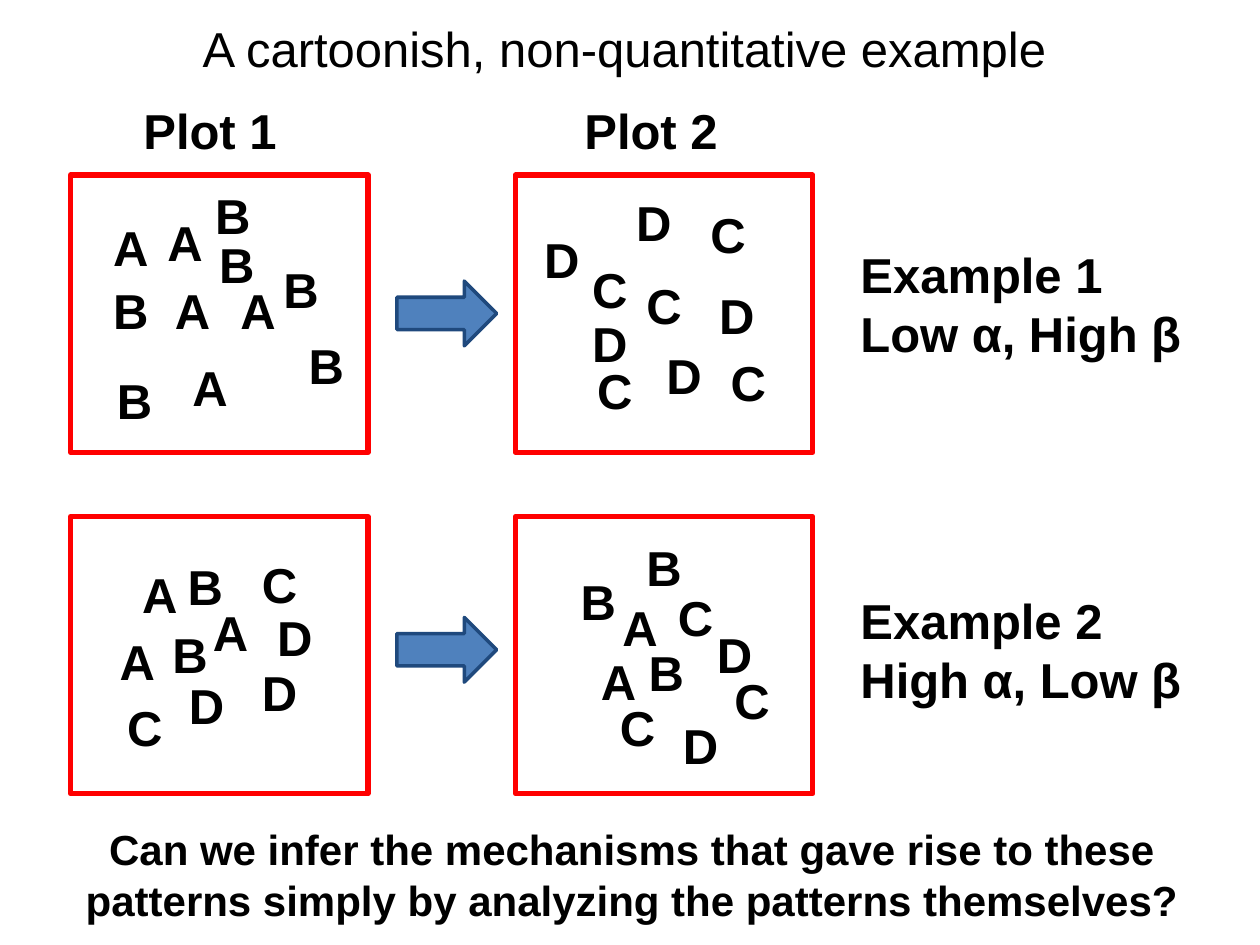
from dataclasses import dataclass

from pptx import Presentation
from pptx.dml.color import RGBColor
from pptx.enum.shapes import MSO_SHAPE as Preset
from pptx.enum.text import MSO_AUTO_SIZE as AutoSize, PP_ALIGN as Align
from pptx.util import Pt


@dataclass(frozen=True)
class Theme:
    font: str = "Arial"
    text: RGBColor = RGBColor(0, 0, 0)
    frame: RGBColor = RGBColor(0xFF, 0, 0)
    arrow: RGBColor = RGBColor(0x4F, 0x81, 0xBD)
    arrow_edge: RGBColor = RGBColor(0x1F, 0x49, 0x7D)
    size: int = 28
    question_size: int = 24


@dataclass(frozen=True)
class Box:
    left: float
    top: float
    width: float
    height: float

    def lengths(self) -> tuple:
        return Pt(self.left), Pt(self.top), Pt(self.width), Pt(self.height)


@dataclass(frozen=True)
class Plot:
    """Species letters, each with its places measured from the frame corner."""
    species: dict[str, list[tuple[float, float]]]


@dataclass(frozen=True)
class Example:
    lines: tuple[str, str]
    frame_top: float
    arrow_top: float
    label_top: float
    plots: tuple[Plot, Plot]


THEME = Theme()
PLOT_LEFTS = (40.3, 294.5)
PLOT_WIDTH, PLOT_HEIGHT = 170, 158.4
LETTER_WIDTH, LINE_HEIGHT = 35.3, 41

EXAMPLES = (
    Example(("Example 1", "Low α, High β"), 100.1, 160.6, 136.1, (
        Plot({"A": [(17.3, 20.9), (48.2, 18), (52.6, 56.9), (62.6, 100.8), (90, 56.9)],
              "B": [(19.4, 108), (75.6, 2.2), (17.3, 56.9), (128.9, 87.8),
                    (77.8, 30.2), (114.5, 44.6)]}),
        Plot({"C": [(67.7, 54), (104.4, 13), (39.6, 102.2), (115.9, 97.9), (36.7, 44.6)],
              "D": [(9.4, 27.4), (61.9, 6.5), (79.2, 93.6), (36.7, 75.6), (109.4, 59.8)]}),
    )),
    Example(("Example 2", "High α, Low β"), 295.2, 352.8, 334.1, (
        Plot({"A": [(33.8, 23.8), (20.9, 61.9), (74.2, 45.4)],
              "B": [(59.8, 19.4), (51.1, 58.3)],
              "C": [(102.2, 18), (25.2, 100.1)],
              "D": [(110.9, 48.2), (60.5, 87.1), (102.2, 79.9)]}),
        Plot({"A": [(54, 42.5), (41.8, 73.4)],
              "B": [(30.2, 28.1), (67.7, 8.6), (69.1, 68.4)],
              "C": [(52.6, 100.1), (85.7, 36.7), (118.1, 84.2)],
              "D": [(108, 58.3), (88.6, 110.2)]}),
    )),
)


def add_text(shapes, box: Box, *lines: str, size: int = THEME.size, bold: bool = True,
             wrap: bool = False, align: Align = Align.LEFT) -> None:
    frame = shapes.add_textbox(*box.lengths()).text_frame
    frame.word_wrap = wrap
    frame.auto_size = AutoSize.SHAPE_TO_FIT_TEXT
    frame.text = "\n".join(lines)
    for para in frame.paragraphs:
        para.alignment = align
        para.font.name = THEME.font
        para.font.size = Pt(size)
        para.font.bold = bold
        para.font.color.rgb = THEME.text


def add_preset(shapes, preset: Preset, box: Box, line: RGBColor, weight: float,
               fill: RGBColor | None = None) -> None:
    shape = shapes.add_shape(preset, *box.lengths())
    shape.shadow.inherit = False
    if fill is None:
        shape.fill.background()
    else:
        shape.fill.solid()
        shape.fill.fore_color.rgb = fill
    shape.line.color.rgb = line
    shape.line.width = Pt(weight)


def add_plot(page, plot: Plot, left: float, top: float) -> None:
    group = page.shapes.add_group_shape().shapes
    for letter, places in plot.species.items():
        for across, down in places:
            add_text(group, Box(left + across, top + down, LETTER_WIDTH, LINE_HEIGHT), letter)
    add_preset(group, Preset.RECTANGLE, Box(left, top, PLOT_WIDTH, PLOT_HEIGHT),
               THEME.frame, 3)


def add_example(page, example: Example) -> None:
    for plot, left in zip(example.plots, PLOT_LEFTS):
        add_plot(page, plot, left, example.frame_top)
    add_preset(page.shapes, Preset.RIGHT_ARROW, Box(226.8, example.arrow_top, 57, 37),
               THEME.arrow_edge, 2, THEME.arrow)
    add_text(page.shapes, Box(484.6, example.label_top, 200, 75), *example.lines)


def main() -> None:
    deck = Presentation()
    deck.slide_width, deck.slide_height = Pt(720), Pt(540)
    page = deck.slides.add_slide(deck.slide_layouts[6])

    # Title and column headings
    add_text(page.shapes, Box(108.7, 7.2, 502.6, LINE_HEIGHT),
             "A cartoonish, non-quantitative example", bold=False)
    for heading, left in (("Plot 1", 74.9), ("Plot 2", 326.9)):
        add_text(page.shapes, Box(left, 54, 91.4, LINE_HEIGHT), heading)

    # One row per example: two plots, an arrow and a label
    for example in EXAMPLES:
        add_example(page, example)

    # Closing question
    add_text(page.shapes, Box(33.1, 467.3, 656, 65.5),
             "Can we infer the mechanisms that gave rise to these patterns "
             "simply by analyzing the patterns themselves?",
             size=THEME.question_size, wrap=True, align=Align.CENTER)

    deck.save("out.pptx")


if __name__ == "__main__":
    main()
